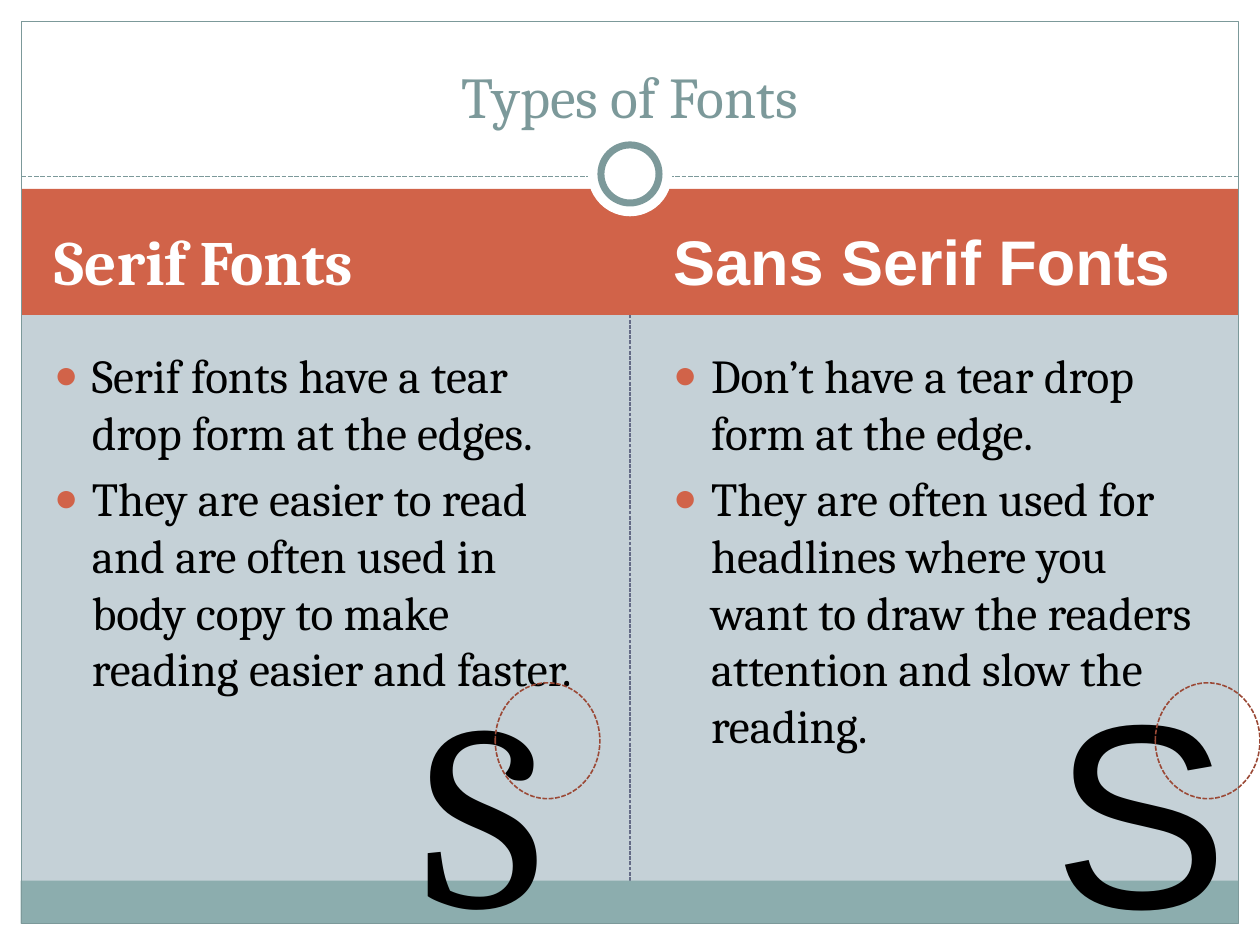
import pptx
import pptx.dml.color
import pptx.enum.dml
import pptx.enum.shapes
import pptx.enum.text
import pptx.oxml
import pptx.oxml.ns
import pptx.util
import lxml.etree

Pt = pptx.util.Pt
SHAPE = pptx.enum.shapes.MSO_SHAPE
ANCHOR = pptx.enum.text.MSO_ANCHOR
ALIGN = pptx.enum.text.PP_ALIGN
DASH = pptx.enum.dml.MSO_LINE.SQUARE_DOT  # stored as sysDot, replaced below
COLORS = {
    "background": "C5D1D7", "white": "FFFFFF", "black": "000000",
    "orange": "D16349", "teal": "8CADAE", "frame": "7C999A",
    "divider": "646B86", "marker": "9B4936",
}


def rgb(name):
    return pptx.dml.color.RGBColor.from_string(COLORS[name])


def write_text(shape, lines, size, color, font="Cambria", bold=False,
               align=ALIGN.LEFT, anchor=ANCHOR.TOP, before=0, bullet=False):
    frame = shape.text_frame
    frame.word_wrap = True
    frame.vertical_anchor = anchor
    frame.text = "\n".join(lines)
    for paragraph in frame.paragraphs:
        paragraph.alignment = align
        paragraph.space_before = Pt(before)
        run_font = paragraph.runs[0].font
        run_font.name, run_font.size, run_font.bold = font, Pt(size), bold
        run_font.color.rgb = rgb(color)
        if bullet:
            properties = paragraph._p.get_or_add_pPr()
            properties.set("marL", str(Pt(21.6)))
            properties.set("indent", str(-Pt(21.6)))
            namespace = pptx.oxml.ns.nsdecls("a")
            for xml in (f'<a:buClr {namespace}><a:srgbClr val="{COLORS["orange"]}"/></a:buClr>',
                        f'<a:buSzPct {namespace} val="85000"/>',
                        f'<a:buFont {namespace} typeface="Arial"/>',
                        f'<a:buChar {namespace} char="●"/>'):
                properties.append(pptx.oxml.parse_xml(xml))


presentation = pptx.Presentation()
presentation.slide_width, presentation.slide_height = Pt(720), Pt(540)
slide = presentation.slides.add_slide(presentation.slide_layouts[5])
slide.background.fill.solid()
slide.background.fill.fore_color.rgb = rgb("background")
shapes = slide.shapes
dashed_lines = []

# Dashed divider between the columns, under the panels
divider = shapes.add_connector(pptx.enum.shapes.MSO_CONNECTOR.STRAIGHT,
                               Pt(360), Pt(503.3), Pt(360), Pt(173.5))
divider.line.color.rgb = rgb("divider")
divider.line.width = Pt(0.75)
dashed_lines.append(divider)

# White margins, heading band and footer band
for left, top, width, height, color in (
        (0, 0, 720, 113.8, "white"),
        (0, 527.8, 720, 12.2, "white"),
        (0, 0, 12.2, 540, "white"),
        (707.8, 0, 12.2, 540, "white"),
        (12.2, 108, 695.6, 72, "orange"),
        (11.8, 503.3, 695.6, 24.5, "teal")):
    panel = shapes.add_shape(SHAPE.RECTANGLE, Pt(left), Pt(top), Pt(width), Pt(height))
    panel.shadow.inherit = False
    panel.fill.solid()
    panel.fill.fore_color.rgb = rgb(color)
    panel.line.fill.background()

# Dashed rule below the title
rule = shapes.add_connector(pptx.enum.shapes.MSO_CONNECTOR.STRAIGHT,
                            Pt(12.2), Pt(100.8), Pt(707.8), Pt(100.8))
rule.line.color.rgb = rgb("frame")
rule.line.width = Pt(0.9)
dashed_lines.append(rule)

# Slide frame and the ring on the rule
for kind, left, top, width, height, fill, line_width in (
        (SHAPE.RECTANGLE, 12.2, 12.2, 695.6, 515.6, None, 0.75),
        (SHAPE.OVAL, 336, 75.6, 48, 48, "white", 0),
        (SHAPE.OVAL, 343.4, 82.8, 33.2, 33.2, "white", 4)):
    outline = shapes.add_shape(kind, Pt(left), Pt(top), Pt(width), Pt(height))
    outline.shadow.inherit = False
    if fill:
        outline.fill.solid()
        outline.fill.fore_color.rgb = rgb(fill)
    else:
        outline.fill.background()
    if line_width:
        outline.line.color.rgb = rgb("frame")
        outline.line.width = Pt(line_width)
    else:
        outline.line.fill.background()

# Column headings and bullets
columns = (
    (23.8, "Serif Fonts", "Cambria",
     ["Serif fonts have a tear drop form at the edges.",
      "They are easier to read and are often used in body copy to make reading easier and faster."]),
    (377.6, "Sans Serif Fonts", "Arial",
     ["Don’t have a tear drop form at the edge.",
      "They are often used for headlines where you want to draw the readers attention "
      "and slow the reading."]),
)
for left, heading, font, bullets in columns:
    heading_box = shapes.add_textbox(Pt(left), Pt(120.2), Pt(318.2), Pt(57.6))
    write_text(heading_box, [heading], 36, "white", font=font, bold=True,
               anchor=ANCHOR.MIDDLE, before=7.2)
    bullet_box = shapes.add_textbox(Pt(left), Pt(194.4), Pt(318.2), Pt(301))
    write_text(bullet_box, bullets, 27, "black", before=5.4, bullet=True)

# Title, brought in front of the white margin
title = shapes.title
title.left, title.top, title.width, title.height = Pt(23.8), Pt(18), Pt(672), Pt(59.8)
write_text(title, ["Types of Fonts"], 33, "frame", align=ALIGN.CENTER, anchor=ANCHOR.BOTTOM)
title.element.getparent().append(title.element)

# Sample letters with circled edges
for letter_left, circle_left, font in ((234.7, 283, "Cambria"), (594.7, 660.2, "Arial")):
    letter = shapes.add_textbox(Pt(letter_left), Pt(365.8), Pt(131), Pt(189.4))
    write_text(letter, ["S"], 150, "black", font=font)
    circle = shapes.add_shape(SHAPE.OVAL, Pt(circle_left), Pt(390.2), Pt(59.8), Pt(66.2))
    circle.shadow.inherit = False
    circle.fill.background()
    circle.line.color.rgb = rgb("marker")
    circle.line.width = Pt(0.9)
    dashed_lines.append(circle)

# Short dashes, and no shadow on the connectors
for shape in dashed_lines:
    shape.line.dash_style = DASH
    shape.element.find(".//" + pptx.oxml.ns.qn("a:prstDash")).set("val", "sysDash")
    if shape in (divider, rule):
        lxml.etree.SubElement(shape.element.spPr, pptx.oxml.ns.qn("a:effectLst"))

presentation.save("out.pptx")
